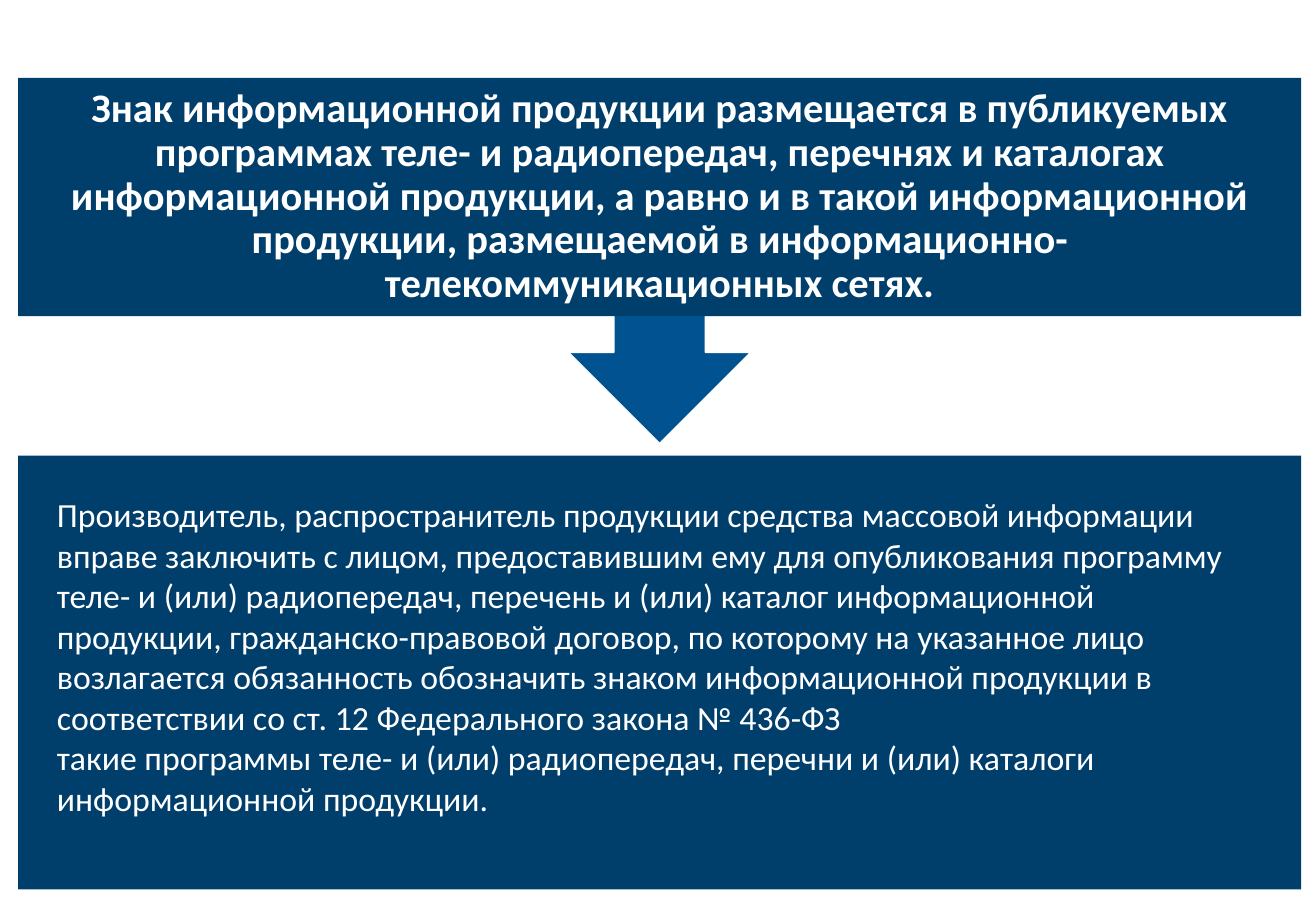
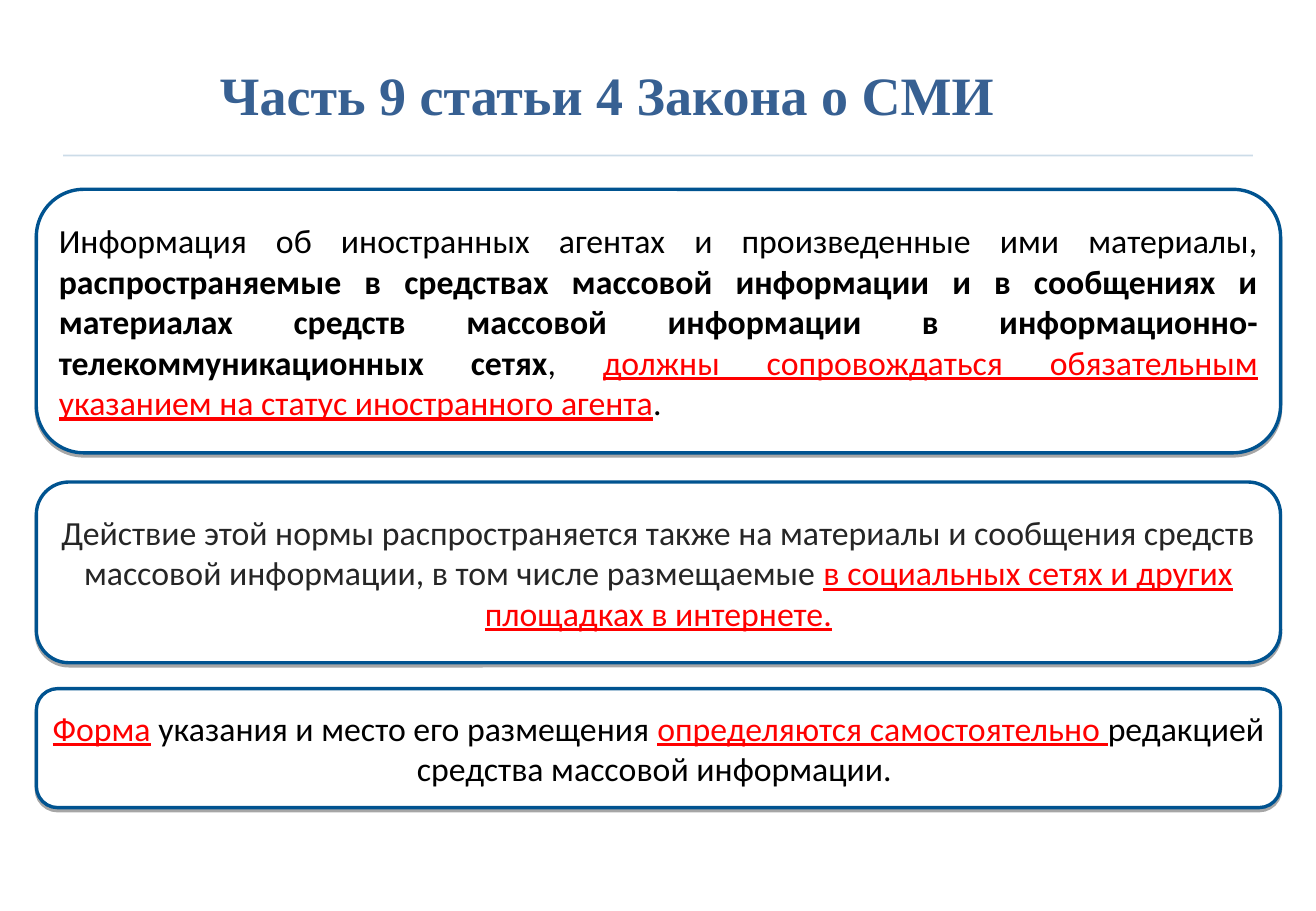
"""Build two slides on labelling information products and foreign agents' materials."""
from dataclasses import dataclass

from lxml import etree
from pptx import Presentation
from pptx.dml.color import RGBColor
from pptx.enum.shapes import MSO_CONNECTOR, MSO_SHAPE
from pptx.enum.text import MSO_ANCHOR, PP_ALIGN
from pptx.oxml.ns import qn
from pptx.util import Cm, Pt

RECTANGLE, ROUNDED = MSO_SHAPE.RECTANGLE, MSO_SHAPE.ROUNDED_RECTANGLE
CALLOUT, STRAIGHT = MSO_SHAPE.DOWN_ARROW_CALLOUT, MSO_CONNECTOR.STRAIGHT
LEFT, CENTER, JUSTIFY = PP_ALIGN.LEFT, PP_ALIGN.CENTER, PP_ALIGN.JUSTIFY
MIDDLE = MSO_ANCHOR.MIDDLE


@dataclass(frozen=True)
class Theme:
    blue: str = "005390"
    navy: str = "003E6C"
    title: str = "376092"
    white: str = "FFFFFF"
    black: str = "000000"
    charcoal: str = "262626"
    red: str = "FF0000"
    body_font: str = "Calibri"
    title_font: str = "Times New Roman"
    body_size: int = 20
    lead_size: int = 24
    title_size: int = 32


THEME = Theme()
SLIDE_WIDTH, SLIDE_HEIGHT = 27.51, 19.05

WHITE = {"color": THEME.white}
LEAD = {"color": THEME.white, "size": THEME.lead_size, "bold": True}
HEADING = {"color": THEME.title, "size": THEME.title_size, "bold": True,
           "name": THEME.title_font}
PLAIN = {"color": THEME.black}
STRONG = {"color": THEME.black, "bold": True}
SOFT = {"color": THEME.charcoal}
MARKED = {"color": THEME.red, "underline": True}

RULE = [("Знак информационной продукции размещается в публикуемых программах теле- и "
         "радиопередач, перечнях и каталогах информационной продукции, а равно и в такой "
         "информационной продукции, размещаемой в информационно-телекоммуникационных "
         "сетях.", LEAD)]
CONTRACT = [
    [("Производитель, распространитель продукции средства массовой информации вправе "
      "заключить с лицом, предоставившим ему для опубликования программу теле- и (или) "
      "радиопередач, перечень и (или) каталог информационной продукции, "
      "гражданско-правовой договор, по которому на указанное лицо возлагается "
      "обязанность обозначить знаком информационной продукции в соответствии со ст. 12 "
      "Федерального закона № 436-ФЗ", WHITE)],
    [("такие программы теле- и (или) радиопередач, перечни и (или) каталоги "
      "информационной продукции.", WHITE)],
]
HEADLINE = [("Часть 9 статьи 4 Закона о СМИ", HEADING)]
NORMS = [
    (3.96, 5.51, JUSTIFY, [
        ("Информация об иностранных агентах и произведенные ими материалы, ", PLAIN),
        ("распространяемые в средствах массовой информации и в сообщениях и материалах "
         "средств массовой информации в информационно-телекоммуникационных сетях", STRONG),
        (", ", PLAIN),
        ("должны сопровождаться обязательным указанием на статус иностранного агента",
         MARKED),
        (".", PLAIN)]),
    (10.08, 3.78, CENTER, [
        ("Действие этой нормы распространяется также на материалы и сообщения средств "
         "массовой информации, в том числе размещаемые ", SOFT),
        ("в социальных сетях и других площадках в интернете.", MARKED)]),
    (14.4, 2.49, CENTER, [
        ("Форма", MARKED),
        (" указания и место его размещения ", PLAIN),
        ("определяются самостоятельно ", MARKED),
        ("редакцией средства массовой информации. ", PLAIN)]),
]


def rgb(color):
    return RGBColor.from_string(color)


def write(holder, paragraphs, align, insets, spacing=None):
    frame = holder.text_frame
    sides = ("margin_left", "margin_top", "margin_right", "margin_bottom")
    settings = {"word_wrap": True, "vertical_anchor": MIDDLE,
                **{side: Cm(inset) for side, inset in zip(sides, insets)}}
    for attribute, value in settings.items():
        setattr(frame, attribute, value)
    for index, pieces in enumerate(paragraphs):
        paragraph = frame.add_paragraph() if index else frame.paragraphs[0]
        paragraph.alignment = align
        paragraph.line_spacing = spacing
        for text, style in pieces:
            run = paragraph.add_run()
            run.text = text
            look = {"name": THEME.body_font, "size": THEME.body_size, **style}
            run.font.color.rgb = rgb(look.pop("color"))
            look["size"] = Pt(look["size"])
            for attribute, value in look.items():
                setattr(run.font, attribute, value)


def add_panel(slide, preset, box, fill, line=None, width=1):
    panel = slide.shapes.add_shape(preset, *map(Cm, box))
    panel.shadow.inherit = False
    panel.fill.solid()
    panel.fill.fore_color.rgb = rgb(fill)
    if line:
        panel.line.color.rgb = rgb(line)
        panel.line.width = Pt(width)
    else:
        panel.line.fill.background()
    return panel


def add_alpha(color_element, percent):
    etree.SubElement(color_element, qn("a:alpha"), val=str(percent * 1000))


def drop_shadow(panel):
    effects = panel._element.spPr.find(qn("a:effectLst"))
    shadow = etree.SubElement(effects, qn("a:outerShdw"), blurRad="0",
                              dist=str(Pt(1.8)), dir="5400000", rotWithShape="0")
    add_alpha(etree.SubElement(shadow, qn("a:srgbClr"), val=THEME.black), 35)


def add_divider(slide, left, right, top):
    divider = slide.shapes.add_connector(STRAIGHT, Cm(left), Cm(top), Cm(right), Cm(top))
    divider.line.color.rgb = rgb(THEME.blue)
    divider.line.width = Pt(1)
    properties = divider._element.spPr
    add_alpha(next(properties.iter(qn("a:srgbClr"))), 20)
    etree.SubElement(properties, qn("a:effectLst"))


def build_labelling(slide):
    left, width, top = 0.38, 26.82, 1.63
    add_panel(slide, CALLOUT, (left, top, width, 7.65), THEME.blue, THEME.white)
    rule = add_panel(slide, RECTANGLE, (left, top, width, 4.98), THEME.navy)
    write(rule, [RULE], CENTER, (0.81, 0.1, 0.81, 0.1), 0.9)
    contract = add_panel(slide, RECTANGLE, (left, 9.53, width, 9.07), THEME.navy)
    write(contract, CONTRACT, LEFT, (0.81, 0.81, 0.81, 1.5))


def build_foreign_agents(slide):
    add_divider(slide, 1.32, 26.19, 3.25)
    headline = slide.shapes.add_textbox(Cm(1.52), Cm(0.46), Cm(22.35), Cm(3.18))
    write(headline, [HEADLINE], CENTER, (0.3, 0.15, 0.3, 0.15), 0.9)
    for top, height, align, pieces in NORMS:
        norm = add_panel(slide, ROUNDED, (0.76, top, 26.01, height),
                         THEME.white, THEME.blue, 2)
        norm.adjustments[0] = 0.18
        drop_shadow(norm)
        write(norm, [pieces], align, (0.18,) * 4)


def main():
    deck = Presentation()
    deck.slide_width, deck.slide_height = Cm(SLIDE_WIDTH), Cm(SLIDE_HEIGHT)
    blank = deck.slide_layouts[6]
    for build in (build_labelling, build_foreign_agents):
        build(deck.slides.add_slide(blank))
    deck.save("out.pptx")


if __name__ == "__main__":
    main()
